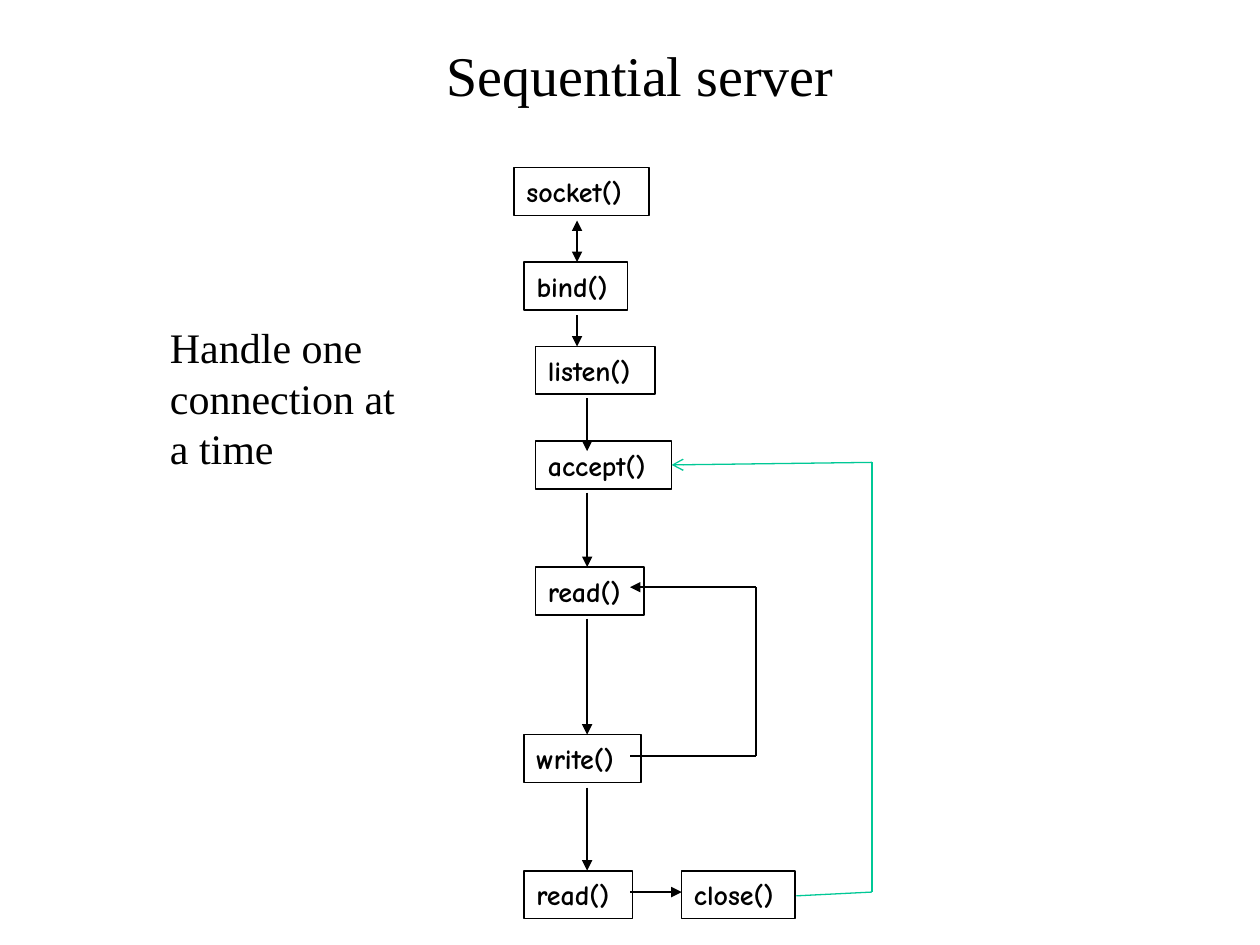
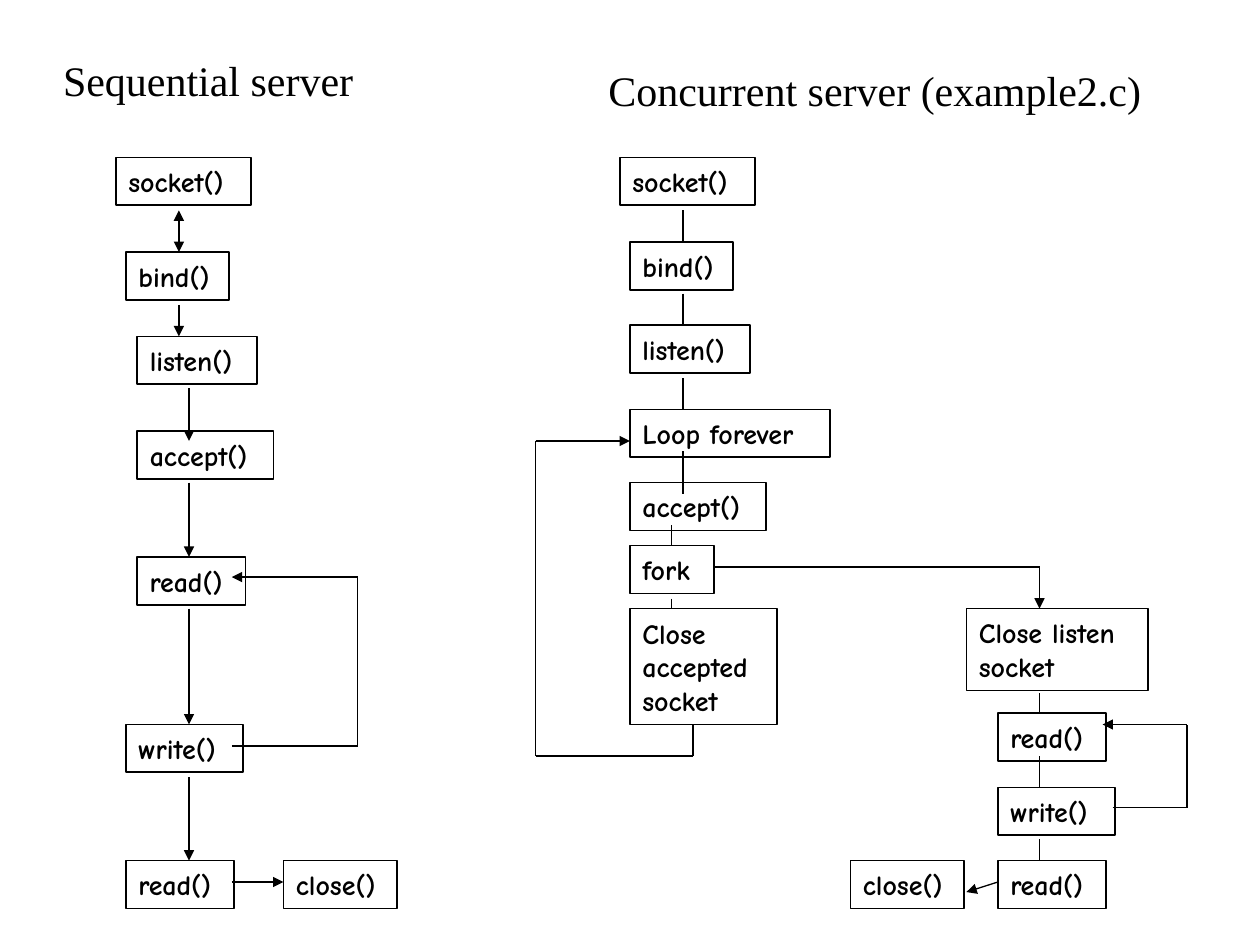
"""Build two slides comparing a sequential and a concurrent socket server."""
from itertools import pairwise

from pptx import Presentation
from pptx import util as u
from pptx.dml.color import RGBColor
from pptx.enum import shapes, text
from pptx.oxml.ns import qn
from lxml import etree

BLACK = "000000"
GREEN = "00C896"
HEADING_FONT = "Times New Roman"
CALL_FONT = "Comic Neue"
CALL_WIDTHS = {
    "socket()": 1.07, "bind()": 0.82, "listen()": 0.95, "accept()": 1.08,
    "read()": 0.86, "write()": 0.93, "close()": 0.9, "fork": 0.67,
    "Loop forever": 1.59, "Close\naccepted\nsocket": 1.17,
    "Close listen\nsocket": 1.44,
}
CALL_HEIGHT = 0.38
EXTRA_LINE = 0.27


def colour(value):
    """Return the colour for a hex string."""
    return RGBColor.from_string(value)


def write_text(shape, content, font, size, bold=False, align=text.PP_ALIGN.LEFT):
    """Fill a shape with formatted paragraphs, one for each line."""
    frame = shape.text_frame
    frame.word_wrap = True
    frame.auto_size = text.MSO_AUTO_SIZE.NONE
    frame.vertical_anchor = text.MSO_ANCHOR.MIDDLE
    frame.text = content
    for paragraph in frame.paragraphs:
        paragraph.alignment = align
        paragraph.font.name = font
        paragraph.font.size = u.Pt(size)
        paragraph.font.bold = bold
        paragraph.font.color.rgb = colour(BLACK)


def add_title(slide, content, box, size, align=text.PP_ALIGN.LEFT):
    """Place and format the title placeholder."""
    title = slide.shapes.title
    title.left, title.top, title.width, title.height = map(u.Inches, box)
    write_text(title, content, HEADING_FONT, size, align=align)


def add_label(slide, content, box):
    """Add a plain text box in the heading font."""
    label = slide.shapes.add_textbox(*map(u.Inches, box))
    write_text(label, content, HEADING_FONT, 24)


def add_calls(slide, origin, calls):
    """Add outlined boxes at offsets from the origin."""
    for name, left, top in calls:
        height = CALL_HEIGHT + EXTRA_LINE * name.count("\n")
        box = (origin[0] + left, origin[1] + top, CALL_WIDTHS[name], height)
        call = slide.shapes.add_shape(shapes.MSO_SHAPE.RECTANGLE, *map(u.Inches, box))
        call.shadow.inherit = False
        call.fill.background()
        call.line.color.rgb = colour(BLACK)
        call.line.width = u.Pt(1)
        write_text(call, name, CALL_FONT, 16, bold=True)


def add_route(slide, origin, points, head=None, tail=None, line_colour=BLACK):
    """Join points with straight lines, with optional arrowheads at the ends."""
    places = [(u.Inches(origin[0] + x), u.Inches(origin[1] + y)) for x, y in points]
    segments = []
    for start, end in pairwise(places):
        segment = slide.shapes.add_connector(shapes.MSO_CONNECTOR.STRAIGHT, *start, *end)
        segment.line.color.rgb = colour(line_colour)
        segment.line.width = u.Pt(0.75)
        etree.SubElement(segment.element.spPr, qn("a:effectLst"))
        segments.append(segment)
    for segment, tag, kind in ((segments[0], "a:headEnd", head), (segments[-1], "a:tailEnd", tail)):
        if kind:
            outline = segment.element.spPr.find(qn("a:ln"))
            etree.SubElement(outline, qn(tag), type=kind)


def add_drops(slide, origin, drops, tail=None):
    """Add vertical lines given as x, top and bottom."""
    for x, top, bottom in drops:
        add_route(slide, origin, [(x, top), (x, bottom)], tail=tail)


def sequential_flow(slide, origin):
    """Draw the calls of a server that handles one connection at a time."""
    add_calls(slide, origin, [
        ("socket()", 0, 0), ("bind()", 0.08, 0.75), ("listen()", 0.17, 1.42),
        ("accept()", 0.17, 2.17), ("read()", 0.17, 3.17), ("write()", 0.08, 4.5),
        ("read()", 0.08, 5.58), ("close()", 1.33, 5.58),
    ])
    add_route(slide, origin, [(0.5, 0.42), (0.5, 0.75)], head="triangle", tail="triangle")
    add_drops(slide, origin, [
        (0.5, 1.17, 1.42), (0.58, 1.83, 2.25), (0.58, 2.58, 3.17),
        (0.58, 3.58, 4.5), (0.58, 4.92, 5.58),
    ], tail="triangle")
    add_route(slide, origin, [(0.92, 5.75), (1.33, 5.75)], tail="triangle")
    read_loop = [(0.92, 4.67), (1.92, 4.67), (1.92, 3.33), (0.92, 3.33)]
    add_route(slide, origin, read_loop, tail="triangle")


def parent_flow(slide, origin):
    """Draw the accepting process of the concurrent server."""
    add_calls(slide, origin, [
        ("socket()", 0.67, 0), ("bind()", 0.75, 0.67), ("listen()", 0.75, 1.33),
        ("Loop forever", 0.75, 2), ("accept()", 0.75, 2.58), ("fork", 0.75, 3.08),
        ("Close\naccepted\nsocket", 0.75, 3.58),
    ])
    add_drops(slide, origin, [
        (1.17, 0.42, 0.67), (1.17, 1.08, 1.33), (1.17, 1.75, 2),
        (1.17, 2.33, 2.67), (1.08, 2.92, 3.08), (1.08, 3.5, 3.58),
    ])
    forever_loop = [(1.25, 4.5), (1.25, 4.75), (0, 4.75), (0, 2.25), (0.75, 2.25)]
    add_route(slide, origin, forever_loop, tail="triangle")


def child_flow(slide, origin):
    """Draw the forked process that serves one connection."""
    add_calls(slide, origin, [
        ("Close listen\nsocket", 0.92, 0), ("read()", 1.17, 0.83),
        ("write()", 1.17, 1.42), ("read()", 1.17, 2), ("close()", 0, 2),
    ])
    add_drops(slide, origin, [(1.5, 0.67, 0.83), (1.5, 1.17, 1.42), (1.5, 1.83, 2)])
    add_route(slide, origin, [(1.17, 2.17), (0.92, 2.25)], tail="triangle")
    read_loop = [(2.08, 1.58), (2.67, 1.58), (2.67, 0.92), (2, 0.92)]
    add_route(slide, origin, read_loop, tail="triangle")


def sequential_slide(slide):
    """Build the slide on the sequential server."""
    add_title(slide, "Sequential server", (0.83, 0.3, 8.5, 0.58), 32, text.PP_ALIGN.CENTER)
    sequential_flow(slide, (4.08, 1.33))
    next_client = [(6.32, 7.11), (6.92, 7.08), (6.92, 3.67), (5.33, 3.69)]
    add_route(slide, (0, 0), next_client, tail="arrow", line_colour=GREEN)
    add_label(slide, "Handle one\nconnection at\na time", (1.25, 2.5, 2.09, 1.31))


def comparison_slide(slide):
    """Build the slide that sets both servers side by side."""
    add_title(slide, "Sequential server", (0.4, 0.38, 2.8, 0.5), 24)
    add_label(slide, "Concurrent server (example2.c)", (4.73, 0.46, 4.43, 0.5))
    sequential_flow(slide, (0.92, 1.25))
    parent_flow(slide, (4.25, 1.25))
    child_flow(slide, (6.75, 4.83))
    add_route(slide, (0, 0), [(5.67, 4.5), (8.25, 4.5), (8.25, 4.83)], tail="triangle")


def main():
    """Create the presentation and save it."""
    presentation = Presentation()
    presentation.slide_width = u.Inches(10)
    presentation.slide_height = u.Inches(7.5)
    title_only = presentation.slide_layouts[5]
    for build in (sequential_slide, comparison_slide):
        build(presentation.slides.add_slide(title_only))
    presentation.save("out.pptx")


if __name__ == "__main__":
    main()
